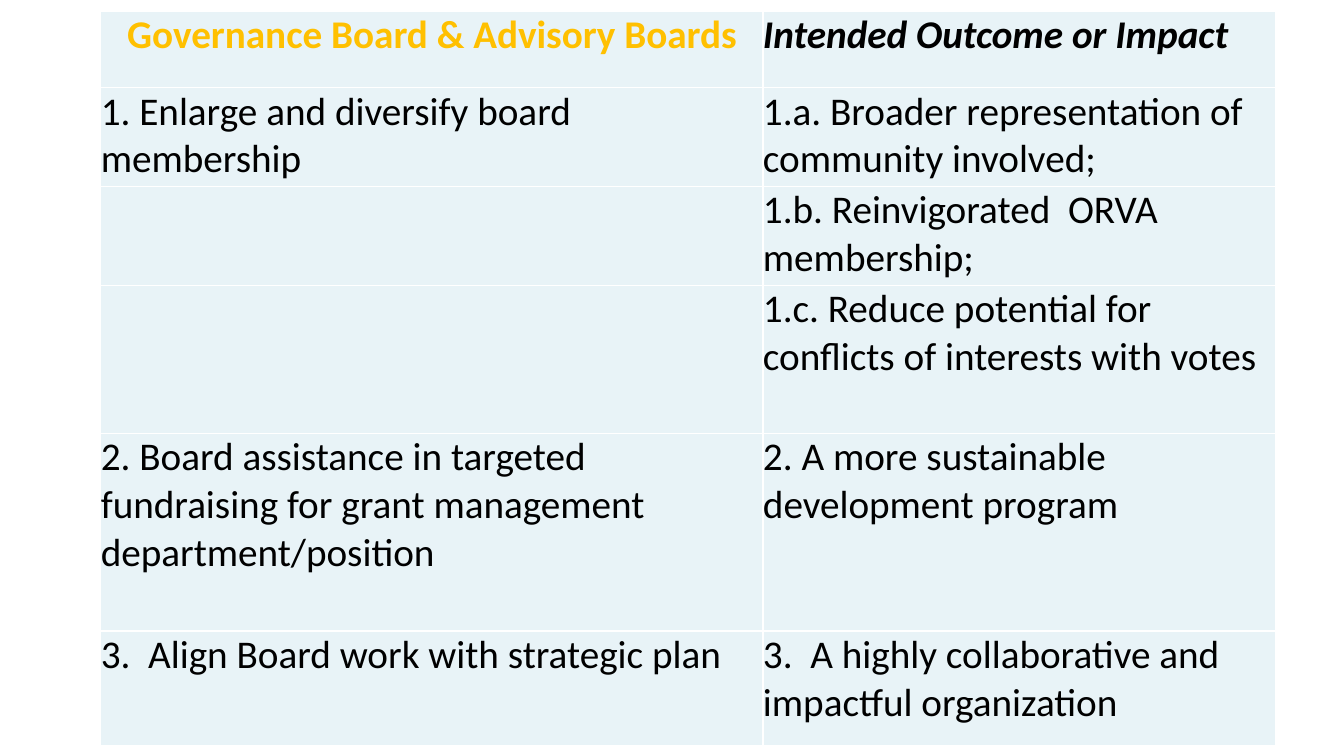
"""Build a slide with a table of board goals and their intended outcomes."""
from dataclasses import dataclass

from lxml import etree
from pptx import Presentation
from pptx.dml.color import RGBColor
from pptx.enum.text import PP_ALIGN
from pptx.oxml.ns import qn
from pptx.util import Pt

LEFT, CENTER = PP_ALIGN.LEFT, PP_ALIGN.CENTER


@dataclass(frozen=True)
class Theme:
    font: str = "Calibri"
    size: int = 28
    text: str = "000000"
    accent: str = "FFC000"
    cell: str = "E8F3F7"
    border: str = "FFFFFF"
    border_width: int = 1


theme = Theme()


def add_borders(cell):
    properties = cell._tc.get_or_add_tcPr()
    for side in ("a:lnL", "a:lnR", "a:lnT", "a:lnB"):
        line = etree.SubElement(properties, qn(side), w=str(Pt(theme.border_width)))
        fill = etree.SubElement(line, qn("a:solidFill"))
        etree.SubElement(fill, qn("a:srgbClr"), val=theme.border)


def write(cell, words, color, align=LEFT, bold=False, italic=False):
    paragraph = cell.text_frame.paragraphs[0]
    paragraph.alignment = align
    run = paragraph.add_run()
    run.text = words
    run.font.name = theme.font
    run.font.size = Pt(theme.size)
    run.font.bold = bold
    run.font.italic = italic
    run.font.color.rgb = RGBColor.from_string(color)


goals_and_outcomes = [
    ("1. Enlarge and diversify board membership",
     "1.a. Broader representation of community involved;"),
    ("", "1.b. Reinvigorated  ORVA membership;"),
    ("", "1.c. Reduce potential for conflicts of interests with votes"),
    ("2. Board assistance in targeted fundraising for grant management department/position",
     "2. A more sustainable development program"),
    ("3.  Align Board work with strategic plan",
     "3.  A highly collaborative and  impactful organization"),
]
column_widths = [473, 366.5]
row_heights = [54.7, 70.6, 70.6, 105.8, 141.1, 82]

presentation = Presentation()
presentation.slide_width = Pt(960)
presentation.slide_height = Pt(540)
slide = presentation.slides.add_slide(presentation.slide_layouts[6])

board_plan = slide.shapes.add_table(
    len(row_heights), len(column_widths), Pt(72), Pt(8),
    Pt(sum(column_widths)), Pt(sum(row_heights))).table
for column, width in zip(board_plan.columns, column_widths):
    column.width = Pt(width)
for row, height in zip(board_plan.rows, row_heights):
    row.height = Pt(height)

for cell in board_plan.iter_cells():
    cell.margin_left = cell.margin_right = cell.margin_top = cell.margin_bottom = 0
    add_borders(cell)
    cell.fill.solid()
    cell.fill.fore_color.rgb = RGBColor.from_string(theme.cell)

write(board_plan.cell(0, 0), "Governance Board & Advisory Boards", theme.accent,
      align=CENTER, bold=True)
write(board_plan.cell(0, 1), "Intended Outcome or Impact", theme.text,
      bold=True, italic=True)
for row_index, entries in enumerate(goals_and_outcomes, start=1):
    for column_index, entry in enumerate(entries):
        if entry:
            write(board_plan.cell(row_index, column_index), entry, theme.text)

presentation.save("out.pptx")
